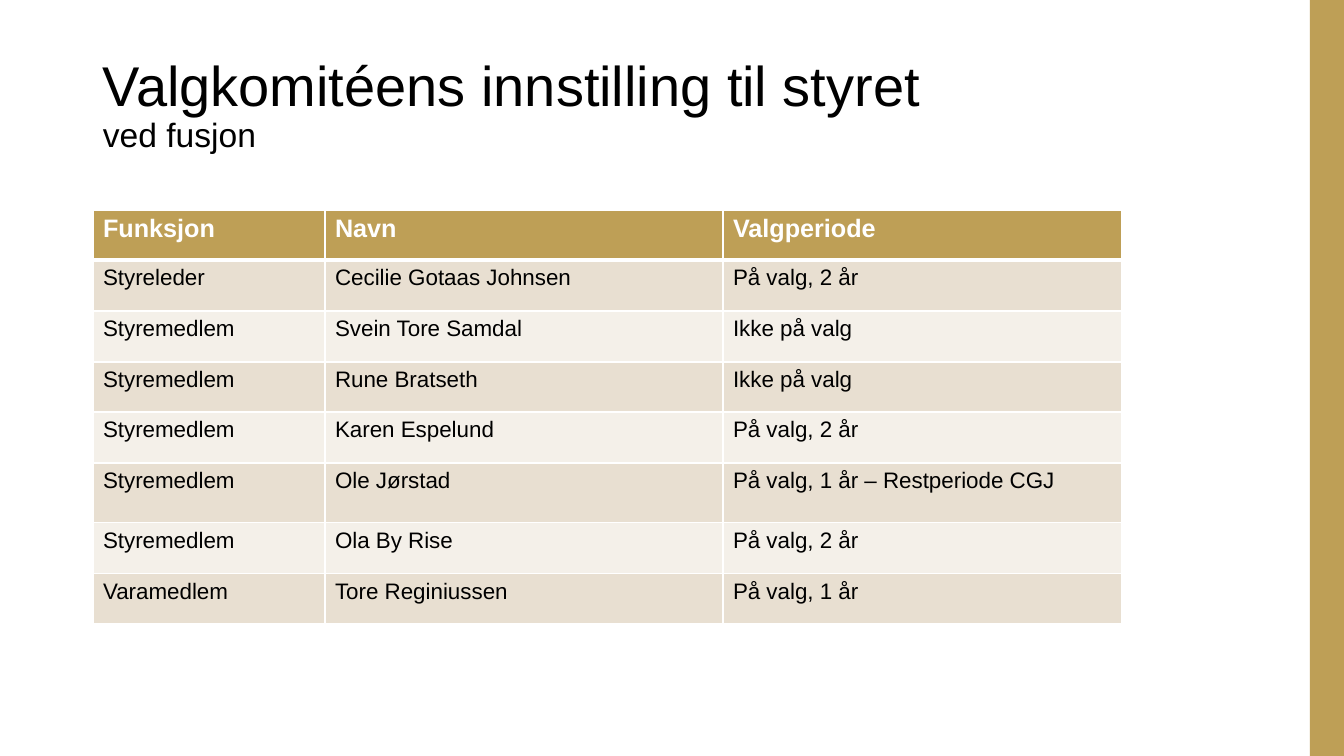
from lxml.etree import SubElement
from pptx import Presentation
from pptx.dml.color import RGBColor
from pptx.enum.shapes import MSO_SHAPE
from pptx.enum.text import MSO_ANCHOR
from pptx.oxml.ns import qn
from pptx.util import Pt

COLORS = {"gold": "BE9F56", "sand": "E8DFD1", "cream": "F4F0E9",
          "white": "FFFFFF", "black": "000000"}
ROWS = [
    ("Funksjon", "Navn", "Valgperiode"),
    ("Styreleder", "Cecilie Gotaas Johnsen", "På valg, 2 år"),
    ("Styremedlem", "Svein Tore Samdal", "Ikke på valg"),
    ("Styremedlem", "Rune Bratseth", "Ikke på valg"),
    ("Styremedlem", "Karen Espelund", "På valg, 2 år"),
    ("Styremedlem", "Ole Jørstad", "På valg, 1 år – Restperiode CGJ"),
    ("Styremedlem", "Ola By Rise", "På valg, 2 år"),
    ("Varamedlem", "Tore Reginiussen", "På valg, 1 år"),
]
COL_EDGES = [93, 325, 723, 1122]
ROW_EDGES = [210, 260, 311, 362, 412, 463, 523, 574, 624]


def px(n):
    return round(n * 914400 / 100.8)


def style_font(font, size, color, bold=False):
    font.name = "Arial"
    font.size = Pt(size)
    font.bold = bold
    font.color.rgb = RGBColor.from_string(COLORS[color])


prs = Presentation()
prs.slide_width, prs.slide_height = px(1344), px(756)
s = prs.slides.add_slide(prs.slide_layouts[6])

# Gold band on the right edge
band = s.shapes.add_shape(MSO_SHAPE.RECTANGLE, px(1310), 0, px(34), px(756))
band.shadow.inherit = False
band.fill.solid()
band.fill.fore_color.rgb = RGBColor.from_string(COLORS["gold"])
band.line.fill.background()

# Title with a smaller second line
title = s.shapes.add_textbox(px(93), px(40), px(1059), px(120))
tf = title.text_frame
tf.word_wrap = True
tf.vertical_anchor = MSO_ANCHOR.BOTTOM
p = tf.paragraphs[0]
p.text = "Valgkomitéens innstilling til styret\vved fusjon"
p.line_spacing = 0.9
for r, size in zip(p.runs, (40, 24)):
    style_font(r.font, size, "black")

# Table of board members
table = s.shapes.add_table(
    len(ROWS), 3, px(COL_EDGES[0]), px(ROW_EDGES[0]),
    px(COL_EDGES[-1] - COL_EDGES[0]), px(ROW_EDGES[-1] - ROW_EDGES[0])).table
for column, left, right in zip(table.columns, COL_EDGES, COL_EDGES[1:]):
    column.width = px(right - left)
for row, top, bottom in zip(table.rows, ROW_EDGES, ROW_EDGES[1:]):
    row.height = px(bottom - top)

for i, texts in enumerate(ROWS):
    header = i == 0
    fill = "gold" if header else ("cream", "sand")[i % 2]
    widths = {"lnL": 1, "lnR": 1, "lnT": 3 if i == 1 else 1, "lnB": 3 if header else 1}
    for j, text in enumerate(texts):
        cell = table.cell(i, j)
        cell.text_frame.text = text
        style_font(cell.text_frame.paragraphs[0].runs[0].font,
                   18 if header else 16, "white" if header else "black", header)
        # White borders, thicker below the header
        tcPr = cell._tc.get_or_add_tcPr()
        for side, width in widths.items():
            ln = SubElement(tcPr, qn(f"a:{side}"), w=str(Pt(width)))
            SubElement(SubElement(ln, qn("a:solidFill")), qn("a:srgbClr"), val=COLORS["white"])
        cell.fill.solid()
        cell.fill.fore_color.rgb = RGBColor.from_string(COLORS[fill])

prs.save("out.pptx")
